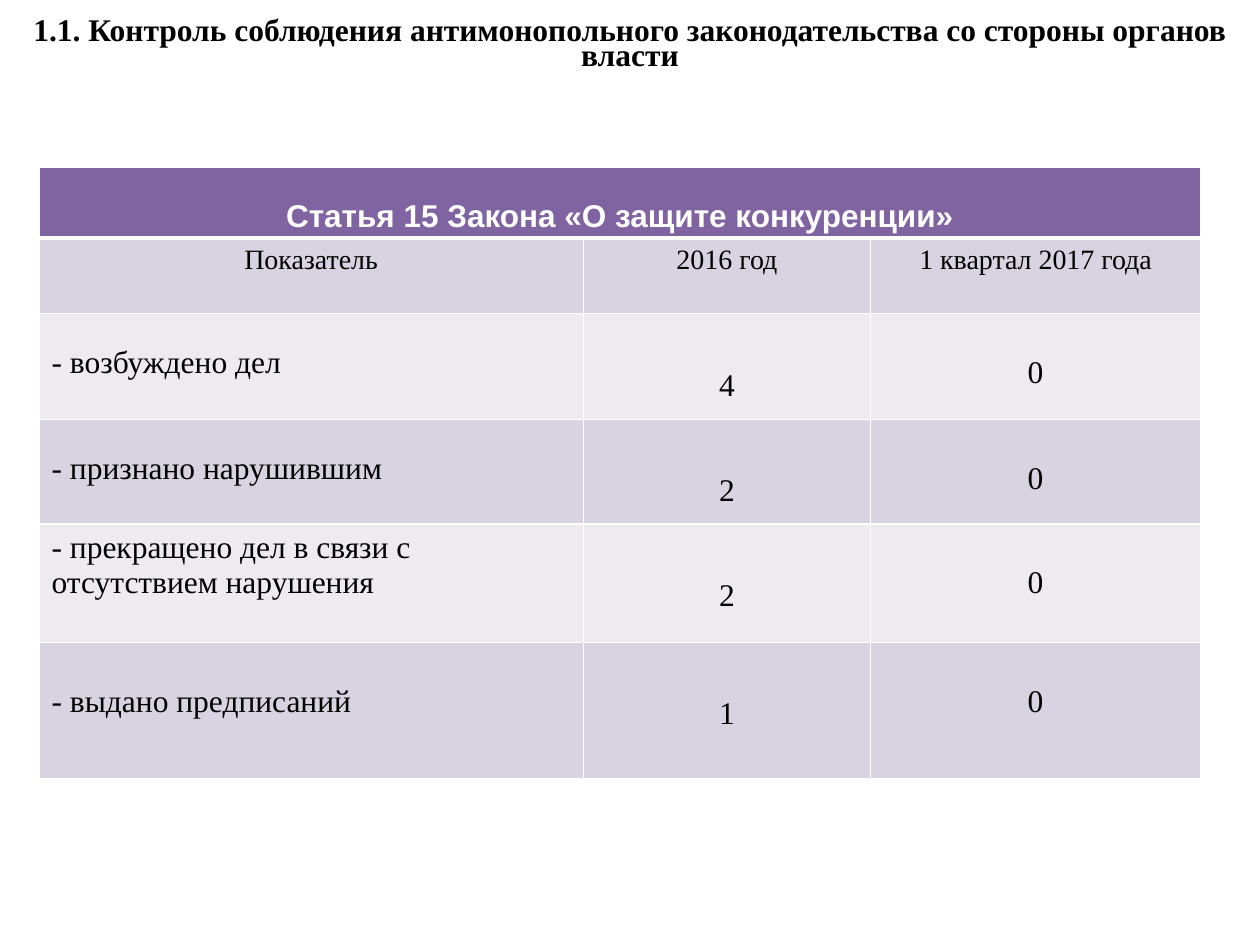
"""Build the slide on antimonopoly control of public authorities."""
from lxml import etree
from pptx import Presentation
from pptx.dml.color import RGBColor
from pptx.enum import text as t
from pptx.oxml import ns
from pptx.util import Inches, Pt

TITLE = "1.1. Контроль соблюдения антимонопольного законодательства со стороны органов власти"
HEAD = "Статья 15 Закона «О защите конкуренции»"
ROWS = [
    ("Показатель", "2016 год", "1 квартал 2017 года"),
    ("- возбуждено дел", "4", "0"),
    ("- признано нарушившим", "2", "0"),
    ("- прекращено дел в связи с отсутствием нарушения", "2", "0"),
    ("- выдано предписаний", "1", "0"),
]
WIDTHS = [4.32, 2.28, 2.62]
HEIGHTS = [0.56, 0.6, 0.84, 0.83, 0.94, 1.08]
LABEL_TOPS = [0.05, 0.25, 0.25, 0.05, 0.33]
VALUE_TOPS = [0.43, 0.33]

BLACK = RGBColor(0, 0, 0)
WHITE = RGBColor(255, 255, 255)
PURPLE = RGBColor(0x80, 0x64, 0xA2)
BANDS = [RGBColor(0xD8, 0xD3, 0xE0), RGBColor(0xED, 0xEA, 0xF0)]
SERIF = "Times New Roman"


def style(para, size, color=BLACK, face=SERIF, bold=False, center=True):
    para.alignment = t.PP_ALIGN.CENTER if center else t.PP_ALIGN.LEFT
    font = para.font
    font.size, font.name, font.bold = Pt(size), face, bold
    font.color.rgb = color


def border(cell, top=1, bottom=1):
    props = cell._tc.get_or_add_tcPr()
    sides = [("lnL", 1), ("lnR", 1), ("lnT", top), ("lnB", bottom)]
    for spot, (side, width) in enumerate(sides):
        line = etree.Element(ns.qn("a:" + side), w=str(Pt(width)))
        fill = etree.SubElement(line, ns.qn("a:solidFill"))
        etree.SubElement(fill, ns.qn("a:srgbClr"), val=str(WHITE))
        props.insert(spot, line)


def paint(cell, words, fill, top):
    cell.text = words
    cell.fill.solid()
    cell.fill.fore_color.rgb = fill
    cell.margin_top = Inches(top)
    return cell.text_frame.paragraphs[0]


def main():
    deck = Presentation()
    deck.slide_width, deck.slide_height = Inches(10), Inches(7.5)
    slide = deck.slides.add_slide(deck.slide_layouts[6])

    wide, high = Inches(10), Inches(0.66)
    path = slide.shapes.build_freeform(0, 0)
    path.add_line_segments([(wide, 0), (wide, high), (0, high)])
    title = path.convert_to_shape(0, Inches(0.04))
    title.shadow.inherit = False
    title.fill.background()
    title.line.fill.background()
    frame = title.text_frame
    frame.word_wrap = True
    frame.vertical_anchor = t.MSO_ANCHOR.MIDDLE
    frame.text = TITLE
    frame.paragraphs[0].line_spacing = 0.66
    style(frame.paragraphs[0], 18, bold=True)

    table = slide.shapes.add_table(
        len(HEIGHTS), len(WIDTHS), Inches(0.31), Inches(1.33),
        Inches(sum(WIDTHS)), Inches(sum(HEIGHTS))).table
    for col, width in zip(table.columns, WIDTHS):
        col.width = Inches(width)
    for row, height in zip(table.rows, HEIGHTS):
        row.height = Inches(height)

    head = table.cell(0, 0)
    head.merge(table.cell(0, len(WIDTHS) - 1))
    style(paint(head, HEAD, PURPLE, 0.25), 18, WHITE, "Arial", True)
    head.margin_bottom = 0
    for cell in table.rows[0].cells:
        border(cell, bottom=3)

    for r, (row, label) in enumerate(zip(ROWS, LABEL_TOPS)):
        tops = [label] + (VALUE_TOPS if r else [label] * 2)
        for c, (words, top) in enumerate(zip(row, tops)):
            cell = table.cell(r + 1, c)
            para = paint(cell, words, BANDS[r % 2], top)
            style(para, 18 if r else 16, center=c > 0 or r == 0)
            border(cell, top=1 if r else 3)

    deck.save("out.pptx")


if __name__ == "__main__":
    main()
